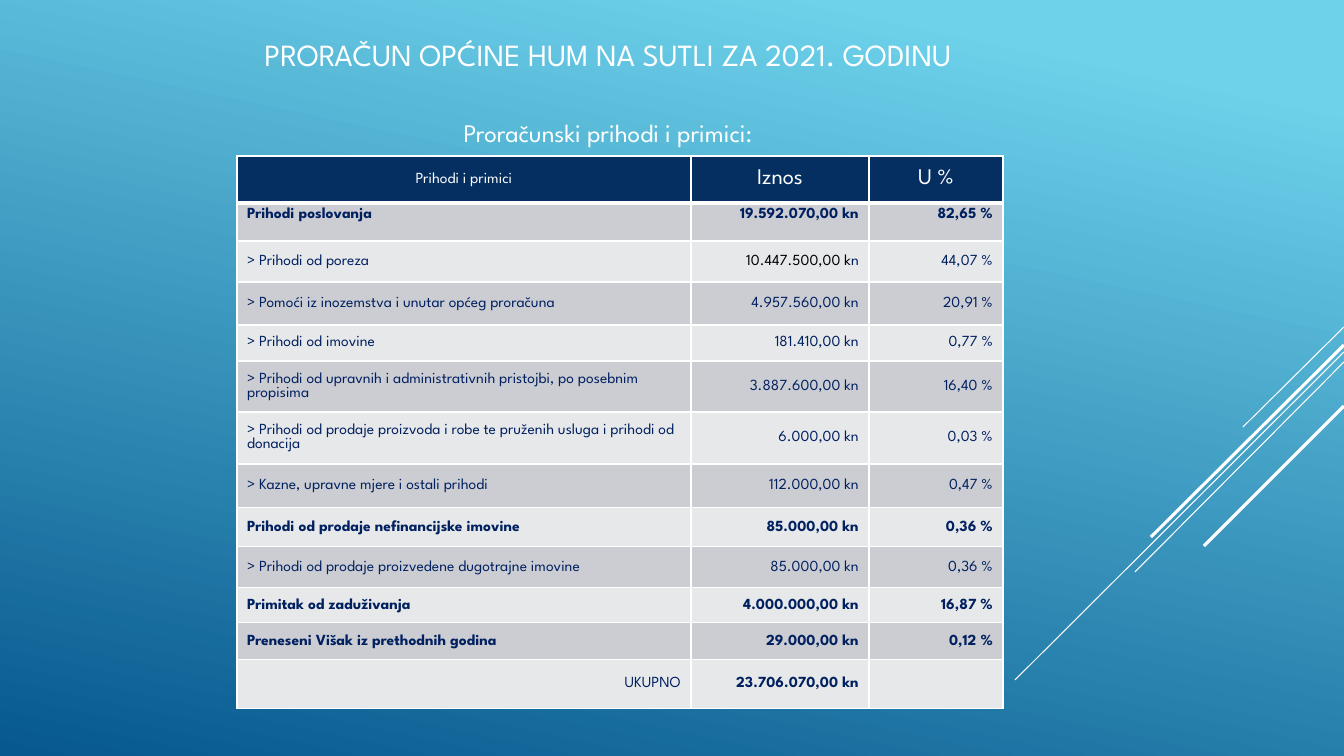
from dataclasses import dataclass

from lxml import etree
from pptx import Presentation
from pptx.dml.color import RGBColor
from pptx.enum.shapes import MSO_CONNECTOR
from pptx.enum.text import MSO_ANCHOR, PP_ALIGN
from pptx.oxml.ns import qn
from pptx.util import Emu, Pt

LEFT, CENTER, RIGHT = PP_ALIGN.LEFT, PP_ALIGN.CENTER, PP_ALIGN.RIGHT
TOP, MIDDLE = MSO_ANCHOR.TOP, MSO_ANCHOR.MIDDLE
STRAIGHT = MSO_CONNECTOR.STRAIGHT
EMU_PER_PX = 914400 / 100.8


@dataclass(frozen=True)
class Theme:
    font: str = "League Spartan"
    white: str = "FFFFFF"
    black: str = "000000"
    navy: str = "002060"
    header: str = "052F61"
    bands: tuple = ("CCCDD2", "E7E8EA")
    sky: str = "6ED2EB"
    deep: str = "06588E"
    title: int = 22
    subtitle: int = 18
    column: int = 16
    body: int = 11


THEME = Theme()

# Diagonal lines: start x, start y, end x, end y, width in points
DIAGONALS = [
    (1344, 327, 1243, 427, 0.75),
    (1344, 352, 1015, 680, 0.75),
    (1344, 362, 1135, 572, 0.75),
    (1344, 345, 1151, 537, 2.25),
    (1344, 406, 1204, 546, 2.25),
]

COL_WIDTHS = [454, 178, 134]
ROW_HEIGHTS = [47, 38, 41, 43, 36, 51, 52, 44, 39, 41, 35, 37, 49]
HEADINGS = [("Prihodi i primici", THEME.body), ("Iznos", THEME.column), ("U %", THEME.column)]
TOTAL = "UKUPNO"
REVENUES = [
    ("Prihodi poslovanja", "19.592.070,00 kn", "82,65 %"),
    ("> Prihodi od poreza", "10.447.500,00 kn", "44,07 %"),
    ("> Pomoći iz inozemstva i unutar općeg proračuna", "4.957.560,00 kn", "20,91 %"),
    ("> Prihodi od imovine", "181.410,00 kn", "0,77 %"),
    ("> Prihodi od upravnih i administrativnih pristojbi, po posebnim propisima",
     "3.887.600,00 kn", "16,40 %"),
    ("> Prihodi od prodaje proizvoda i robe te pruženih usluga i prihodi od donacija",
     "6.000,00 kn", "0,03 %"),
    ("> Kazne, upravne mjere i ostali prihodi", "112.000,00 kn", "0,47 %"),
    ("Prihodi od prodaje nefinancijske imovine", "85.000,00 kn", "0,36 %"),
    ("> Prihodi od prodaje proizvedene dugotrajne imovine", "85.000,00 kn", "0,36 %"),
    ("Primitak od zaduživanja", "4.000.000,00 kn", "16,87 %"),
    ("Preneseni Višak iz prethodnih godina", "29.000,00 kn", "0,12 %"),
    (TOTAL, "23.706.070,00 kn", ""),
]
BLACK_AMOUNT = "10.447.500,00 k"


def px(n):
    return Emu(round(n * EMU_PER_PX))


def rgb(value):
    return RGBColor.from_string(value)


def set_all(obj, values):
    for name, value in values.items():
        setattr(obj, name, value)


def add_run(p, text, size, color, bold=False):
    r = p.add_run()
    r.text = text
    set_all(r.font, {"name": THEME.font, "size": Pt(size), "bold": bold})
    r.font.color.rgb = rgb(color)


def paint_background(s):
    fill = s.background.fill
    fill.gradient()
    fill.gradient_angle = 258
    for stop, position, color in zip(fill.gradient_stops, (0.1, 1), (THEME.sky, THEME.deep)):
        stop.position = position
        stop.color.rgb = rgb(color)


def add_diagonal(s, x1, y1, x2, y2, width):
    line = s.shapes.add_connector(STRAIGHT, px(x1), px(y1), px(x2), px(y2))
    line.line.color.rgb = rgb(THEME.white)
    line.line.width = Pt(width)
    etree.SubElement(line._element.spPr, qn("a:effectLst"))


def add_title(s):
    tf = s.shapes.add_textbox(px(75), px(16), px(1066), px(151)).text_frame
    set_all(tf, {"word_wrap": True, "vertical_anchor": MIDDLE})
    p = tf.paragraphs[0]
    p.alignment = CENTER
    add_run(p, "PRORAČUN OPĆINE HUM NA SUTLI ZA 2021. GODINU", THEME.title, THEME.white)
    p = tf.add_paragraph()
    set_all(p, {"alignment": CENTER, "space_before": Pt(32)})
    add_run(p, "Proračunski prihodi i primici:", THEME.subtitle, THEME.white)


def set_borders(cell, widths):
    tc_pr = cell._tc.get_or_add_tcPr()
    for i, (side, width) in enumerate(widths.items()):
        ln = etree.Element(qn(f"a:{side}"), w=str(Pt(width)))
        fill = etree.SubElement(ln, qn("a:solidFill"))
        etree.SubElement(fill, qn("a:srgbClr"), val=THEME.white)
        tc_pr.insert(i, ln)


def format_cell(cell, fill, align, anchor=MIDDLE, top=1, bottom=1):
    cell.vertical_anchor = anchor
    cell.fill.solid()
    cell.fill.fore_color.rgb = rgb(fill)
    set_borders(cell, {"lnL": 1, "lnR": 1, "lnT": top, "lnB": bottom})
    p = cell.text_frame.paragraphs[0]
    p.alignment = align
    return p


def add_revenue_table(s):
    frame = s.shapes.add_table(len(ROW_HEIGHTS), len(COL_WIDTHS), px(237), px(156),
                               px(sum(COL_WIDTHS)), px(sum(ROW_HEIGHTS)))
    table = frame.table
    set_all(table, {"first_row": False, "horz_banding": False})
    for column, width in zip(table.columns, COL_WIDTHS):
        column.width = px(width)
    for row, height in zip(table.rows, ROW_HEIGHTS):
        row.height = px(height)

    # Header row
    for j, (text, size) in enumerate(HEADINGS):
        p = format_cell(table.cell(0, j), THEME.header, CENTER, bottom=3)
        add_run(p, text, size, THEME.white)

    # Group rows are bold, their parts start with ">"
    for i, row in enumerate(REVENUES):
        first = i == 0
        for j, text in enumerate(row):
            p = format_cell(table.cell(i + 1, j), THEME.bands[i % 2],
                            LEFT if j == 0 and text != TOTAL else RIGHT,
                            TOP if first else MIDDLE, top=3 if first else 1)
            bold = not row[0].startswith(">") and text != TOTAL
            if text.startswith(BLACK_AMOUNT):
                add_run(p, BLACK_AMOUNT, THEME.body, THEME.black, bold)
                text = text.removeprefix(BLACK_AMOUNT)
            if text:
                add_run(p, text, THEME.body, THEME.navy, bold)


def main():
    prs = Presentation()
    set_all(prs, {"slide_width": px(1344), "slide_height": px(756)})
    s = prs.slides.add_slide(prs.slide_layouts[6])
    paint_background(s)
    for diagonal in DIAGONALS:
        add_diagonal(s, *diagonal)
    add_title(s)
    add_revenue_table(s)
    prs.save("out.pptx")


if __name__ == "__main__":
    main()
